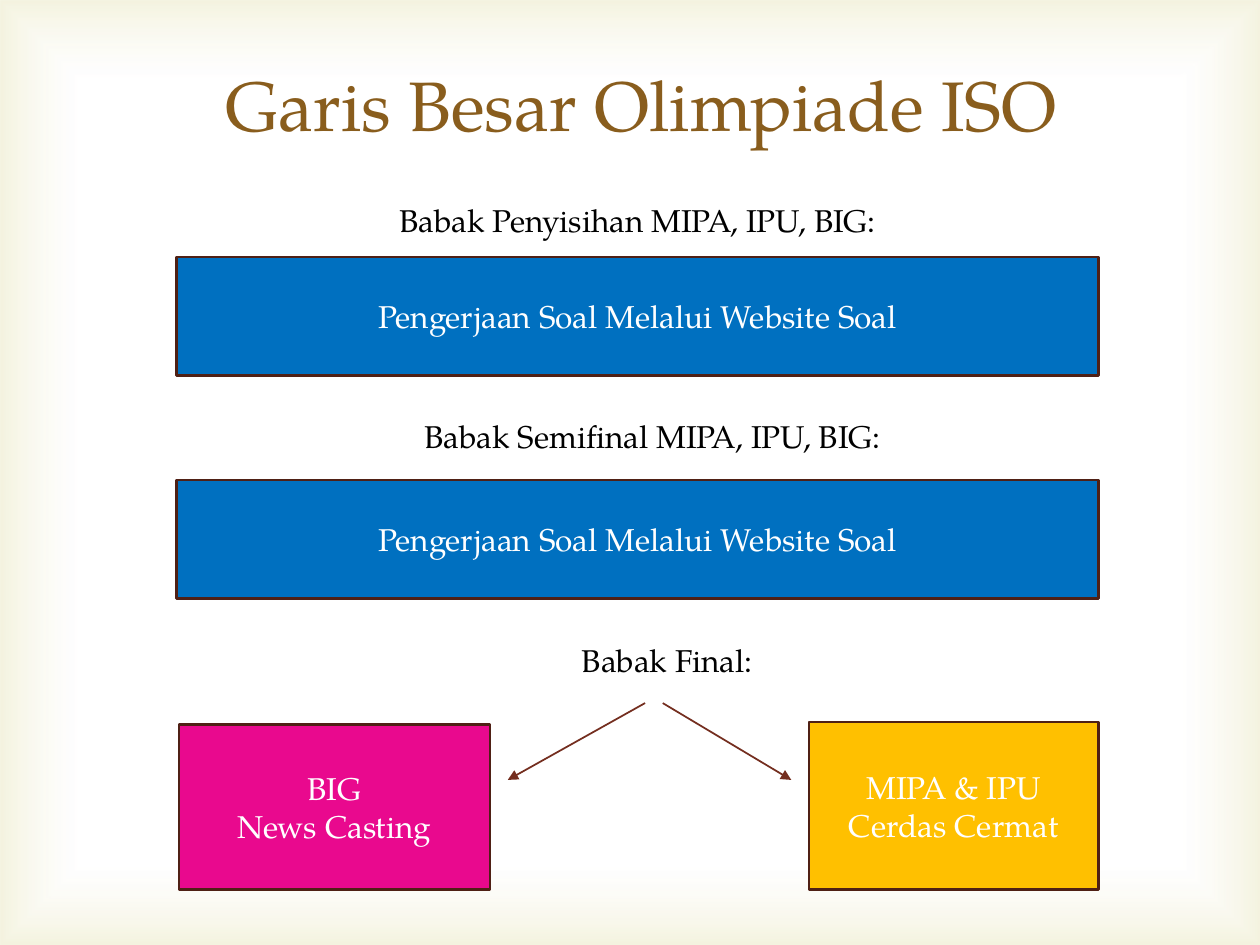
from dataclasses import dataclass

from pptx import Presentation
from pptx.dml.color import RGBColor
from pptx.enum.shapes import MSO_CONNECTOR as Connector, MSO_SHAPE as Shape
from pptx.enum.text import MSO_ANCHOR as Anchor, MSO_AUTO_SIZE as AutoSize, PP_ALIGN as Align
from pptx.oxml import parse_xml
from pptx.oxml.ns import nsdecls, qn
from pptx.oxml.xmlchemy import OxmlElement
from pptx.slide import Slide
from pptx.text.text import TextFrame
from pptx.util import Inches, Pt

FONT = "TeX Gyre Pagella"
BROWN = RGBColor(0x89, 0x5D, 0x1D)
BLACK = RGBColor(0x00, 0x00, 0x00)
WHITE = RGBColor(0xFF, 0xFF, 0xFF)
BLUE = RGBColor(0x00, 0x70, 0xC0)
PINK = RGBColor(0xE9, 0x09, 0x8E)
AMBER = RGBColor(0xFF, 0xC0, 0x00)
BORDER = RGBColor(0x4F, 0x20, 0x15)
ARROW = RGBColor(0x74, 0x2E, 0x1F)
GLOW = RGBColor(0xD1, 0xCA, 0x75)

# Shared edges of the layout, in inches
WIDTH, HEIGHT = 10, 7.5
LEFT, RIGHT = 1.4, 8.72
ROUND_HEIGHT = 0.94
CAPTION_HEIGHT = 0.4
BOTTOM = 7.06
ARROW_TOP, ARROW_BOTTOM = 5.58, 6.19


@dataclass
class Caption:
    text: str
    left: float
    top: float
    width: float
    align: Align = Align.LEFT


@dataclass
class Box:
    text: str
    left: float
    top: float
    right: float
    bottom: float
    color: RGBColor


@dataclass
class Arrow:
    start: float
    end: float


ROUND_TASK = "Pengerjaan Soal Melalui Website Soal"

CAPTIONS = [
    Caption("Babak Penyisihan MIPA, IPU, BIG:", 2.47, 1.55, 5.18, Align.CENTER),
    Caption("Babak Semifinal MIPA, IPU, BIG:", 3.27, 3.26, 5.07),
    Caption("Babak Final:", 4.52, 5.04, 1.76),
]
BOXES = [Box(ROUND_TASK, LEFT, top, RIGHT, top + ROUND_HEIGHT, BLUE) for top in (2.04, 3.81)] + [
    Box("BIG\nNews Casting", 1.42, 5.75, 3.89, BOTTOM, PINK),
    Box("MIPA & IPU\nCerdas Cermat", 6.42, 5.73, RIGHT, BOTTOM, AMBER),
]
ARROWS = [Arrow(5.12, 4.03), Arrow(5.26, 6.28)]


def write(frame: TextFrame, text: str, size: int, color: RGBColor, align: Align) -> None:
    frame.text = text
    frame.word_wrap = True
    for paragraph in frame.paragraphs:
        paragraph.alignment = align
        paragraph.font.name = FONT
        paragraph.font.size = Pt(size)
        paragraph.font.color.rgb = color


def draw_glow(slide: Slide) -> None:
    """Cover the slide with a rectangular gradient, behind everything else."""
    glow = slide.shapes.add_shape(Shape.RECTANGLE, 0, 0, Inches(WIDTH), Inches(HEIGHT))
    glow.shadow.inherit = False
    glow.line.fill.background()
    glow.fill.background()
    stops = "".join(
        f'<a:gs pos="{share * 1000}"><a:srgbClr val="{color}">'
        f'<a:alpha val="{alpha * 1000}"/></a:srgbClr></a:gs>'
        for share, color, alpha in ((83, WHITE, 11), (100, GLOW, 23))
    )
    gradient = parse_xml(
        f'<a:gradFill {nsdecls("a")} rotWithShape="1"><a:gsLst>{stops}</a:gsLst>'
        '<a:path path="rect"><a:fillToRect l="50000" t="50000" r="50000" b="50000"/></a:path>'
        "</a:gradFill>"
    )
    properties = glow.element.spPr
    properties.replace(properties.find(qn("a:noFill")), gradient)
    slide.shapes.element.insert(2, glow.element)


def draw_title(slide: Slide, text: str) -> None:
    title = slide.shapes.title
    title.left, title.top = Inches(1.69), Inches(0.44)
    title.width, title.height = Inches(7.8), Inches(0.77)
    write(title.text_frame, text, 40, BROWN, Align.LEFT)
    title.text_frame.vertical_anchor = Anchor.TOP
    title.text_frame.auto_size = AutoSize.SHAPE_TO_FIT_TEXT


def draw_box(slide: Slide, box: Box) -> None:
    rectangle = slide.shapes.add_shape(
        Shape.RECTANGLE, Inches(box.left), Inches(box.top),
        Inches(box.right - box.left), Inches(box.bottom - box.top),
    )
    rectangle.shadow.inherit = False
    rectangle.fill.solid()
    rectangle.fill.fore_color.rgb = box.color
    rectangle.line.color.rgb = BORDER
    rectangle.line.width = Pt(1.5)
    write(rectangle.text_frame, box.text, 18, WHITE, Align.CENTER)
    rectangle.text_frame.vertical_anchor = Anchor.MIDDLE


def draw_caption(slide: Slide, caption: Caption) -> None:
    label = slide.shapes.add_textbox(
        Inches(caption.left), Inches(caption.top),
        Inches(caption.width), Inches(CAPTION_HEIGHT),
    )
    write(label.text_frame, caption.text, 18, BLACK, caption.align)
    label.text_frame.auto_size = AutoSize.SHAPE_TO_FIT_TEXT


def draw_arrow(slide: Slide, arrow: Arrow) -> None:
    connector = slide.shapes.add_connector(
        Connector.STRAIGHT, Inches(arrow.start), Inches(ARROW_TOP),
        Inches(arrow.end), Inches(ARROW_BOTTOM),
    )
    connector.line.color.rgb = ARROW
    connector.line.width = Pt(1)
    head = OxmlElement("a:tailEnd")
    head.set("type", "triangle")
    connector.line._get_or_add_ln().append(head)
    connector.element.spPr.append(OxmlElement("a:effectLst"))


def main() -> None:
    deck = Presentation()
    deck.slide_width, deck.slide_height = Inches(WIDTH), Inches(HEIGHT)
    slide = deck.slides.add_slide(deck.slide_layouts[5])

    # Background and title
    draw_glow(slide)
    draw_title(slide, "Garis Besar Olimpiade ISO")

    # Rounds of the contest
    for box in BOXES:
        draw_box(slide, box)
    for caption in CAPTIONS:
        draw_caption(slide, caption)

    # The final splits in two
    for arrow in ARROWS:
        draw_arrow(slide, arrow)

    deck.save("out.pptx")


if __name__ == "__main__":
    main()
